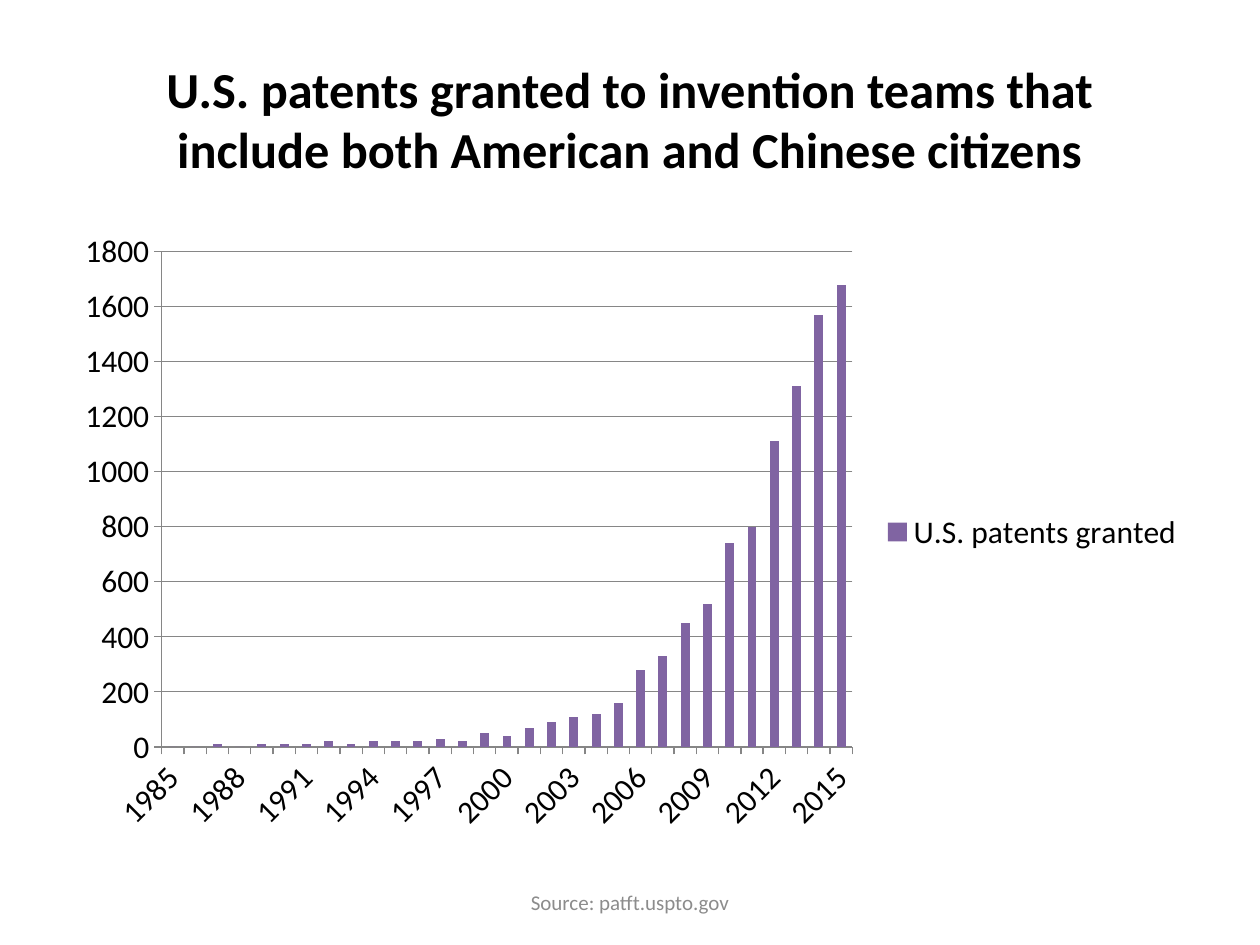
from dataclasses import dataclass
from typing import Any

from pptx import Presentation
from pptx import util as u
from pptx.chart.data import CategoryChartData
from pptx.dml.color import RGBColor
from pptx.enum import chart as charts, text

WIDTH, HEIGHT = u.Inches(10), u.Inches(7.5)


@dataclass(frozen=True)
class Theme:
    font: str = "Calibri"
    ink: str = "000000"
    muted: str = "8C8C8C"
    axis: str = "868686"
    bar: str = "8064A2"
    title_size: float = 28.8
    chart_size: float = 18
    source_size: float = 12


@dataclass(frozen=True)
class Box:
    """A rectangle given as shares of the slide's size."""
    left: float
    top: float
    width: float
    height: float

    def lengths(self) -> tuple[int, ...]:
        return (int(self.left * WIDTH), int(self.top * HEIGHT),
                int(self.width * WIDTH), int(self.height * HEIGHT))


@dataclass(frozen=True)
class Label:
    wording: str
    box: Box
    size: float
    color: str
    bold: bool = False


THEME = Theme()
LABELS = (
    Label("U.S. patents granted to invention teams that\v"
          "include both American and Chinese citizens",
          Box(0.05, 0.04, 0.9, 0.17), THEME.title_size, THEME.ink, True),
    Label("Source: patft.uspto.gov",
          Box(0.34, 0.93, 0.32, 0.05), THEME.source_size, THEME.muted),
)
CHART_BOX = Box(0.05, 0.233, 0.9, 0.66)
FIRST_YEAR = 1985
PATENTS = (0, 0, 10, 0, 10, 10, 10, 20, 10, 20, 20, 20, 30, 20, 50, 40,
           70, 90, 110, 120, 160, 280, 330, 450, 520, 740, 800, 1110,
           1310, 1570, 1680)


def apply(target: Any, values: dict[str, Any]) -> None:
    for name, value in values.items():
        setattr(target, name, value)


def set_font(font: Any, size: float, color: str, bold: bool = False) -> None:
    apply(font, {"name": THEME.font, "size": u.Pt(size), "bold": bold})
    font.color.rgb = RGBColor.from_string(color)


def set_line(line: Any, width: float) -> None:
    line.width = u.Pt(width)
    line.color.rgb = RGBColor.from_string(THEME.axis)


def add_label(slide: Any, label: Label) -> None:
    frame = slide.shapes.add_textbox(*label.box.lengths()).text_frame
    apply(frame, {"word_wrap": True, "vertical_anchor": text.MSO_ANCHOR.MIDDLE})
    paragraph = frame.paragraphs[0]
    apply(paragraph, {"text": label.wording, "alignment": text.PP_ALIGN.CENTER})
    for run in paragraph.runs:
        set_font(run.font, label.size, label.color, label.bold)


def add_patent_chart(slide: Any) -> None:
    data = CategoryChartData()
    data.categories = [str(FIRST_YEAR + i) for i in range(len(PATENTS))]
    data.add_series("U.S. patents granted", PATENTS)
    chart = slide.shapes.add_chart(
        charts.XL_CHART_TYPE.COLUMN_CLUSTERED, *CHART_BOX.lengths(), data).chart
    set_font(chart.font, THEME.chart_size, THEME.ink)
    apply(chart, {"has_title": False, "has_legend": True})
    apply(chart.legend, {"position": charts.XL_LEGEND_POSITION.RIGHT,
                         "include_in_layout": False})

    plot = chart.plots[0]
    apply(plot, {"gap_width": 150, "vary_by_categories": False})
    fill = plot.series[0].format.fill
    fill.solid()
    fill.fore_color.rgb = RGBColor.from_string(THEME.bar)

    for axis in (chart.category_axis, chart.value_axis):
        axis.major_tick_mark = charts.XL_TICK_MARK.OUTSIDE
        set_line(axis.format.line, 0.75)
    apply(chart.category_axis, {"has_major_gridlines": False})
    apply(chart.value_axis, {"minimum_scale": 0, "maximum_scale": 1800,
                             "major_unit": 200, "has_major_gridlines": True})
    set_line(chart.value_axis.major_gridlines.format.line, 0.75)


def main() -> None:
    presentation = Presentation()
    apply(presentation, {"slide_width": WIDTH, "slide_height": HEIGHT})
    slide = presentation.slides.add_slide(presentation.slide_layouts[6])
    add_patent_chart(slide)
    for label in LABELS:
        add_label(slide, label)
    presentation.save("out.pptx")


if __name__ == "__main__":
    main()
